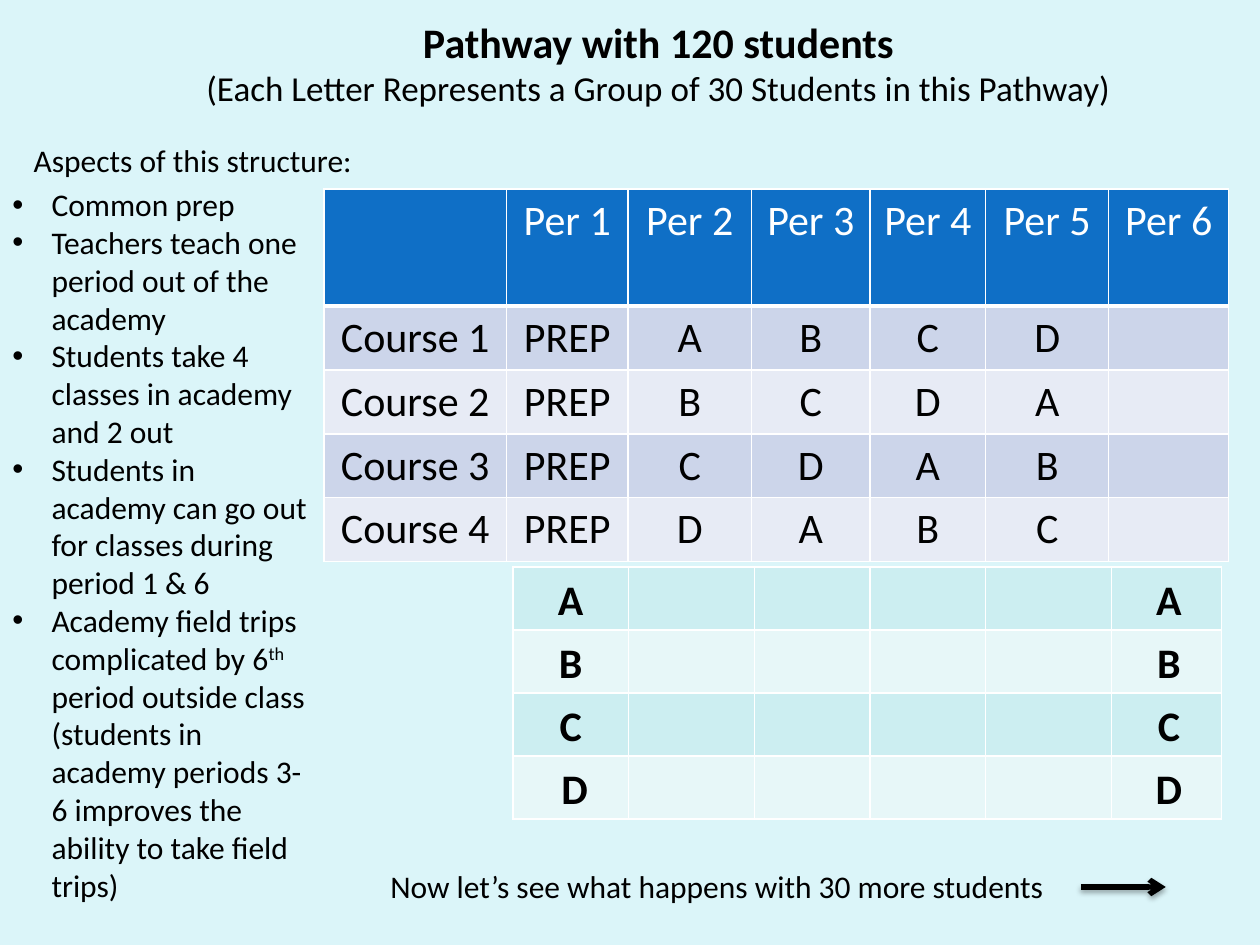
from dataclasses import dataclass

from lxml import etree
from pptx import Presentation
from pptx import util as u
from pptx.dml.color import RGBColor
from pptx.enum import shapes, text
from pptx.oxml import parse_xml
from pptx.oxml.ns import nsdecls, qn

COLORS = {
    "background": "DBF5F9", "ink": "000000", "white": "FFFFFF",
    "header": "0F6FC6", "course_dark": "CCD5EA", "course_light": "E7EBF5",
    "group_dark": "CCEEF1", "group_light": "E7F7F8",
}
FONT = "Calibri"


@dataclass
class Box:
    """Position and size in centimetres."""
    left: float
    top: float
    width: float
    height: float

    def lengths(self) -> list:
        return [u.Cm(v) for v in (self.left, self.top, self.width, self.height)]


@dataclass
class Grid:
    """A table: its corner, column widths, row heights, fills and wording."""
    left: float
    top: float
    columns: list[float]
    heights: list[float]
    fills: list[str]
    rows: list[list[str]]
    header: bool = False


def rgb(name: str) -> RGBColor:
    return RGBColor.from_string(COLORS[name])


def add_bullet(paragraph, indent: float) -> None:
    props = paragraph._p.get_or_add_pPr()
    props.set("marL", str(u.Cm(indent)))
    props.set("indent", str(-u.Cm(indent)))
    etree.SubElement(props, qn("a:buFont")).set("typeface", "Arial")
    etree.SubElement(props, qn("a:buChar")).set("char", "•")


def write(paragraph, words: str, *, size: float = 18, color: str = "ink",
          bold: bool = False, center: bool = False, bullet: float = 0,
          superscript: str = "") -> None:
    """Write one paragraph; the first `superscript` marked by ^ is raised."""
    if bullet:
        add_bullet(paragraph, bullet)
    paragraph.alignment = text.PP_ALIGN.CENTER if center else text.PP_ALIGN.LEFT
    before, _, after = words.partition("^" + superscript) if superscript else (words, "", "")
    for part, raised in ((before, False), (superscript, True), (after, False)):
        if not part:
            continue
        run = paragraph.add_run()
        run.text = part
        run.font.name, run.font.size, run.font.bold = FONT, u.Pt(size), bold
        run.font.color.rgb = rgb(color)
        if raised:
            run._r.get_or_add_rPr().set("baseline", "30000")


def add_text(slide, box: Box, paragraphs: list[tuple[str, dict]]) -> None:
    frame = slide.shapes.add_textbox(*box.lengths()).text_frame
    frame.word_wrap = True
    for i, (words, style) in enumerate(paragraphs):
        write(frame.add_paragraph() if i else frame.paragraphs[0], words, **style)


def add_borders(cell, bottom: float = 1) -> None:
    props = cell._tc.get_or_add_tcPr()
    for side, width in (("L", 1), ("R", 1), ("T", 1), ("B", bottom)):
        props.append(parse_xml(
            f'<a:ln{side} {nsdecls("a")} w="{u.Pt(width)}"><a:solidFill>'
            f'<a:srgbClr val="{COLORS["white"]}"/></a:solidFill></a:ln{side}>'))


def add_grid(slide, grid: Grid) -> None:
    box = Box(grid.left, grid.top, sum(grid.columns), sum(grid.heights))
    table = slide.shapes.add_table(
        len(grid.heights), len(grid.columns), *box.lengths()).table
    table.first_row = table.horz_banding = False
    for column, width in zip(table.columns, grid.columns):
        column.width = u.Cm(width)
    for r, (height, fill, words) in enumerate(zip(grid.heights, grid.fills, grid.rows)):
        table.rows[r].height = u.Cm(height)
        is_header = grid.header and r == 0
        for cell, word in zip(table.rows[r].cells, words):
            add_borders(cell, bottom=3 if is_header else 1)
            cell.fill.solid()
            cell.fill.fore_color.rgb = rgb(fill)
            write(cell.text_frame.paragraphs[0], word, size=24, center=True,
                  color="white" if is_header else "ink")


def add_arrow(slide, left: float, right: float, y: float) -> None:
    arrow = slide.shapes.add_connector(
        shapes.MSO_CONNECTOR.STRAIGHT, u.Cm(left), u.Cm(y), u.Cm(right), u.Cm(y))
    arrow.line.color.rgb = rgb("ink")
    arrow.line.width = u.Pt(3)
    etree.SubElement(arrow.line._get_or_add_ln(), qn("a:tailEnd")).set("type", "arrow")
    arrow._element.spPr.append(parse_xml(
        f'<a:effectLst {nsdecls("a")}><a:outerShdw blurRad="{u.Pt(3.1)}" '
        f'dist="{u.Pt(1.8)}" dir="5400000" rotWithShape="0">'
        f'<a:srgbClr val="{COLORS["ink"]}"><a:alpha val="35000"/></a:srgbClr>'
        '</a:outerShdw></a:effectLst>'))


def main() -> None:
    deck = Presentation()
    deck.slide_width, deck.slide_height = u.Cm(25.4), u.Cm(19.05)
    slide = deck.slides.add_slide(deck.slide_layouts[6])
    slide.background.fill.solid()
    slide.background.fill.fore_color.rgb = rgb("background")

    # Course schedule: each course starts one group later than the one above
    groups = "ABCD"
    schedule = [[""] + [f"Per {n}" for n in range(1, 7)]]
    for i in range(len(groups)):
        schedule.append([f"Course {i + 1}", "PREP", *(groups[i:] + groups[:i]), ""])
    add_grid(slide, Grid(
        6.53, 3.81, [3.68, 2.45, 2.49, 2.39, 2.33, 2.48, 2.42],
        [2.36] + [1.28] * 4,
        ["header"] + ["course_dark", "course_light"] * 2, schedule, header=True))

    # Title
    add_text(slide, Box(3.05, 0.2, 20.45, 3.18), [
        ("Pathway with 120 students", dict(size=24, bold=True, center=True)),
        ("(Each Letter Represents a Group of 30 Students in this Pathway)",
         dict(size=20, center=True))])

    # Periods each group spends outside the academy
    pitch, out_top = 1.27, 11.43
    add_grid(slide, Grid(
        10.34, out_top, [2.33, 2.54, 2.33, 2.33, 2.54, 2.21], [pitch] * 4,
        ["group_dark", "group_light"] * 2, [[""] * 6] * 4))
    for lefts in ([10.34, 10.34, 10.34, 10.42], [22.4] * 4):
        for i, (group, left) in enumerate(zip(groups, lefts)):
            add_text(slide, Box(left, out_top + i * pitch, 2.33, pitch),
                     [(group, dict(size=24, bold=True, center=True))])

    # Aspects of the structure
    add_text(slide, Box(0.43, 2.72, 8.26, 1.02), [("Aspects of this structure:", {})])
    aspects = [
        "Common prep",
        "Teachers teach one period out of the academy",
        "Students take 4 classes in academy and 2 out",
        "Students in academy can go out for classes during period 1 & 6",
        "Academy field trips complicated by 6^th period outside class (students in "
        "academy periods 3-6 improves the ability to take field trips)",
    ]
    add_text(slide, Box(0, 3.61, 6.55, 14.88),
             [(aspect, dict(bullet=0.79, superscript="th" if "^" in aspect else ""))
              for aspect in aspects])

    # Lead to the next step
    add_text(slide, Box(7.62, 17.35, 13.74, 1.02),
             [("Now let’s see what happens with 30 more students", {})])
    add_arrow(slide, 21.79, 23.5, 17.88)

    deck.save("out.pptx")


if __name__ == "__main__":
    main()
